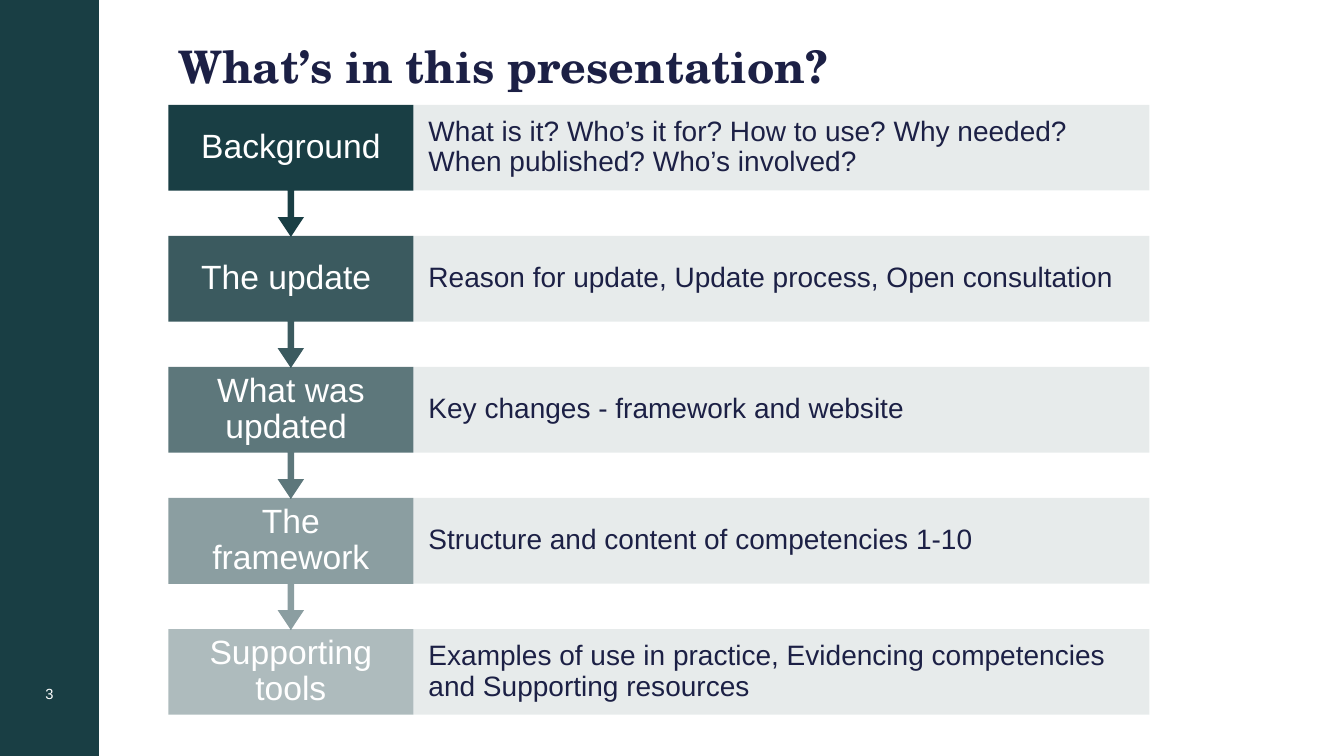
from typing import NamedTuple

from lxml.etree import SubElement
from pptx import Presentation
from pptx.dml.color import RGBColor
from pptx.enum.shapes import MSO_SHAPE
from pptx.enum.text import MSO_ANCHOR, PP_ALIGN
from pptx.oxml.ns import qn
from pptx.shapes.autoshape import Shape
from pptx.slide import Slide
from pptx.util import Inches, Pt

TEAL = RGBColor(0x19, 0x3E, 0x44)
NAVY = RGBColor(0x1C, 0x20, 0x45)
WHITE = RGBColor(0xFF, 0xFF, 0xFF)

BODY_FONT = "Arial"
TITLE_FONT = "TeX Gyre Schola"

LEFT, FIRST_TOP, PITCH = 1.67, 1.04, 1.3
TOPIC_WIDTH, DETAIL_WIDTH = 2.43, 7.3
ROW_HEIGHT, CALLOUT_HEIGHT = 0.85, 1.31
CALLOUT_PROPORTIONS = (0.05, 0.1, 0.15, 0.65)
DETAIL_OPACITY = 10


class Box(NamedTuple):
    left: float
    top: float
    width: float
    height: float


class Section(NamedTuple):
    topic: str
    detail: str
    opacity: int


class TextStyle(NamedTuple):
    size: float
    color: RGBColor
    align: PP_ALIGN = PP_ALIGN.LEFT
    font: str = BODY_FONT
    bold: bool = False
    anchor: MSO_ANCHOR = MSO_ANCHOR.MIDDLE
    side_inset: float = 0.1
    line_spacing: float = 0.9


TITLE = TextStyle(32, NAVY, font=TITLE_FONT, bold=True, anchor=MSO_ANCHOR.TOP)
PAGE_NUMBER = TextStyle(10.5, WHITE, PP_ALIGN.CENTER, line_spacing=1.0)
TOPIC = TextStyle(24, WHITE, PP_ALIGN.CENTER, side_inset=0.17)
DETAIL = TextStyle(20, NAVY, side_inset=0.15)

SECTIONS = [
    Section("Background", "What is it? Who’s it for? How to use? Why needed? "
            "When published? Who’s involved?", 100),
    Section("The update ", "Reason for update, Update process, Open consultation", 85),
    Section("What was updated ", "Key changes - framework and website", 70),
    Section("The framework", "Structure and content of competencies 1-10", 50),
    Section("Supporting tools", "Examples of use in practice, Evidencing competencies "
            "and Supporting resources", 35),
]


def write(shape: Shape, text: str, style: TextStyle) -> None:
    frame = shape.text_frame
    frame.word_wrap = True
    frame.vertical_anchor = style.anchor
    frame.margin_left = frame.margin_right = Inches(style.side_inset)
    frame.margin_top = frame.margin_bottom = Inches(0.05)
    frame.text = text
    paragraph = frame.paragraphs[0]
    paragraph.alignment = style.align
    paragraph.line_spacing = style.line_spacing
    font = paragraph.runs[0].font
    font.name = style.font
    font.size = Pt(style.size)
    font.bold = style.bold
    font.color.rgb = style.color


def add_text(slide: Slide, box: Box, text: str, style: TextStyle) -> None:
    write(slide.shapes.add_textbox(*map(Inches, box)), text, style)


def add_panel(slide: Slide, box: Box, opacity: int = 100,
              kind: MSO_SHAPE = MSO_SHAPE.RECTANGLE) -> Shape:
    """Add a borderless teal shape with the given opacity in percent."""
    panel = slide.shapes.add_shape(kind, *map(Inches, box))
    panel.shadow.inherit = False
    panel.line.fill.background()
    panel.fill.solid()
    panel.fill.fore_color.rgb = TEAL
    if opacity < 100:
        color = panel.element.spPr.find(".//" + qn("a:srgbClr"))
        SubElement(color, qn("a:alpha")).set("val", str(opacity * 1000))
    return panel


def add_section(slide: Slide, section: Section, top: float, has_arrow: bool) -> None:
    if has_arrow:
        topic = add_panel(slide, Box(LEFT, top, TOPIC_WIDTH, CALLOUT_HEIGHT),
                          section.opacity, MSO_SHAPE.DOWN_ARROW_CALLOUT)
        for index, proportion in enumerate(CALLOUT_PROPORTIONS):
            topic.adjustments[index] = proportion
    else:
        topic = add_panel(slide, Box(LEFT, top, TOPIC_WIDTH, ROW_HEIGHT), section.opacity)
    write(topic, section.topic, TOPIC)

    detail = add_panel(slide, Box(LEFT + TOPIC_WIDTH, top, DETAIL_WIDTH, ROW_HEIGHT),
                       DETAIL_OPACITY)
    write(detail, section.detail, DETAIL)


def main() -> None:
    presentation = Presentation()
    presentation.slide_width = Inches(13.33)
    presentation.slide_height = Inches(7.5)
    slide = presentation.slides.add_slide(presentation.slide_layouts[6])

    add_panel(slide, Box(0, 0, 0.98, 7.5))
    add_text(slide, Box(-0.01, 6.74, 1, 0.29), "3", PAGE_NUMBER)
    add_text(slide, Box(LEFT, 0.4, 9.74, 0.43), "What’s in this presentation?", TITLE)

    # Bottom row first, so that each arrow tip lies over the row below it.
    last = len(SECTIONS) - 1
    for row, section in reversed(list(enumerate(SECTIONS))):
        add_section(slide, section, FIRST_TOP + row * PITCH, has_arrow=row < last)

    presentation.save("out.pptx")


if __name__ == "__main__":
    main()
